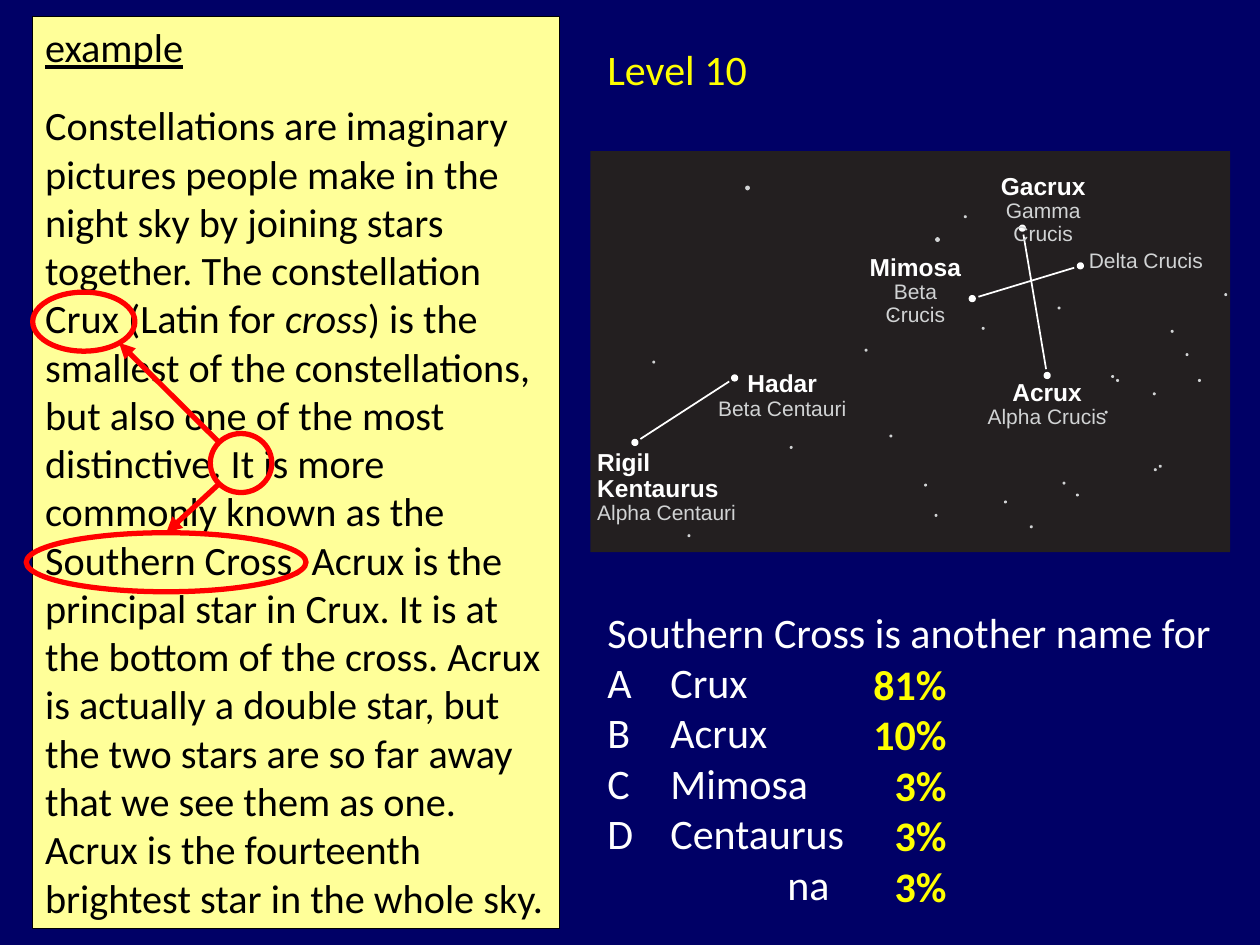
"""Build a reading-test slide about the Southern Cross."""
import math

import lxml.etree
import pptx
import pptx.dml.color
import pptx.enum.shapes
import pptx.enum.text
import pptx.oxml.ns
import pptx.util

Cm, Pt = pptx.util.Cm, pptx.util.Pt
KIND = pptx.enum.shapes.MSO_SHAPE
ALIGN = pptx.enum.text.PP_ALIGN
ANCHOR = pptx.enum.text.MSO_ANCHOR
NAVY, CREAM, BLACK, WHITE = "000066", "FFFF99", "000000", "FFFFFF"
YELLOW, RED, SKY, GREY = "FFFF00", "FF0000", "231F20", "D1D3D4"

PASSAGE = [
    ("Constellations are imaginary pictures people make in the night sky by "
     "joining stars together. The constellation Crux (Latin for ", False),
    ("cross", True),
    (") is the smallest of the constellations, but also one of the most "
     "distinctive. It is more commonly known as the Southern Cross. Acrux is "
     "the principal star in Crux. It is at the bottom of the cross. Acrux is "
     "actually a double star, but the two stars are so far away that we see "
     "them as one. Acrux is the fourteenth brightest star in the whole sky.",
     False),
]
STARS = {
    "Mimosa": (19.6, 6.02), "Delta": (21.78, 5.36), "Gacrux": (20.61, 4.6),
    "Acrux": (21.11, 7.57), "Hadar": (14.81, 7.62), "Rigil": (12.8, 8.92),
}
LINKS = [("Gacrux", "Acrux"), ("Mimosa", "Delta"), ("Rigil", "Hadar")]
FAINT = [
    (17.46, 7.06), (18, 6.38), (19.82, 6.62), (13.18, 7.3), (20.27, 10.12),
    (20.79, 10.62), (21.72, 9.98), (21.45, 9.74), (23.29, 9.47), (23.39, 9.4),
    (24.18, 7.67), (22.53, 7.67), (22.43, 7.59), (22.3, 8.31), (23.27, 7.94),
    (23.93, 7.15), (24.71, 5.94), (17.96, 8.79), (18.87, 10.39), (18.66, 9.78),
    (13.89, 10.8), (15.95, 9.02), (19.46, 4.37), (23.63, 6.68), (21.35, 6.21),
]
CLEAR = [(15.07, 3.79), (18.9, 4.83)]
LABELS = [
    ((19.71, 3.58, 2.64, 0.91), ["Gacrux"], "Gamma Crucis", 13, ALIGN.CENTER),
    ((17.45, 5.21, 2.01, 0.94), ["Mimosa"], "Beta Crucis", 13, ALIGN.CENTER),
    ((21.95, 5.08, 2.44, 0.43), [], "Delta Crucis", 12, ALIGN.LEFT),
    ((14.4, 7.52, 2.74, 0.97), ["Hadar"], "Beta Centauri", 14, ALIGN.CENTER),
    ((19.84, 7.7, 2.54, 0.99), ["Acrux"], "Alpha Crucis", 14, ALIGN.CENTER),
    ((12.04, 9.07, 2.97, 1.55), ["Rigil", "Kentaurus"], "Alpha Centauri", 15,
     ALIGN.LEFT),
]
CHOICES = ["A\tCrux", "B\tAcrux", "C\tMimosa", "D\tCentaurus"]
RATES = ["81%", "10%", "3%", "3%", "3%"]


def color(code):
    """Turn a hex string into a colour."""
    return pptx.dml.color.RGBColor.from_string(code)


def node(parent, tag, **attrs):
    """Append a drawing element to a parent."""
    return lxml.etree.SubElement(parent, pptx.oxml.ns.qn(tag), attrs)


def run(para, text, size, ink, face="Calibri", bold=False, slant=False):
    """Add one styled run."""
    piece = para.add_run()
    piece.text = text
    font = piece.font
    font.name, font.size, font.bold, font.italic = face, Pt(size), bold, slant
    font.color.rgb = color(ink)
    return piece


def lines(frame, count):
    """Return the given number of paragraphs in a frame."""
    return [frame.paragraphs[0]] + [frame.add_paragraph() for _ in range(count - 1)]


def place(shape, left, top, width, height):
    """Move and size a placeholder and fix its frame."""
    shape.left, shape.top = Cm(left), Cm(top)
    shape.width, shape.height = Cm(width), Cm(height)
    shape.text_frame.word_wrap = True
    shape.text_frame.auto_size = pptx.enum.text.MSO_AUTO_SIZE.NONE
    return shape.text_frame


def draw(shapes, kind, box, fill=None, edge=None, weight=1):
    """Add a flat preset shape."""
    shape = shapes.add_shape(kind, *map(Cm, box))
    shape.shadow.inherit = False
    if fill:
        shape.fill.solid()
        shape.fill.fore_color.rgb = color(fill)
    else:
        shape.fill.background()
    if edge:
        shape.line.color.rgb = color(edge)
        shape.line.width = Pt(weight)
    else:
        shape.line.fill.background()
    return shape


def star(shapes, spot, size, ink, edge=None):
    """Add a round star centred on a spot."""
    x, y = spot
    draw(shapes, KIND.OVAL, (x - size / 2, y - size / 2, size, size), ink, edge)


def link(shapes, start, end, ink, weight, arrow=False):
    """Add a straight line, with an arrowhead if asked."""
    line = shapes.add_connector(
        pptx.enum.shapes.MSO_CONNECTOR.STRAIGHT, *map(Cm, start + end))
    line.line.color.rgb = color(ink)
    line.line.width = Pt(weight)
    if arrow:
        node(line.line._get_or_add_ln(), "a:tailEnd", type="triangle")
    node(line._element.spPr, "a:effectLst")
    return line


def join(shapes, start, end, gap=0.13):
    """Link two stars, leaving a gap at each."""
    dx, dy = end[0] - start[0], end[1] - start[1]
    part = gap / math.hypot(dx, dy)
    link(shapes, (start[0] + dx * part, start[1] + dy * part),
         (end[0] - dx * part, end[1] - dy * part), WHITE, 1)


def label(shapes, box, names, note, lead, align):
    """Name a star in bold with its formal name below."""
    frame = shapes.add_textbox(*map(Cm, box)).text_frame
    frame.word_wrap = True
    frame.margin_left = frame.margin_right = 0
    frame.margin_top = frame.margin_bottom = 0
    paras = lines(frame, len(names) + 1)
    for para, name in zip(paras, names):
        run(para, name, 14, WHITE, "Arial", bold=True)
    run(paras[-1], note, 12, GREY, "Arial")
    for para in paras:
        para.alignment, para.line_spacing = align, Pt(lead)
    paras[-1].line_spacing = Pt(min(lead, 13))


def story(shapes):
    """Add the reading passage."""
    panel = draw(shapes, KIND.RECTANGLE, (0.66, 0.33, 10.62, 18.39),
                 CREAM, BLACK, 0.75)
    panel.text_frame.vertical_anchor = ANCHOR.TOP
    panel.text_frame.word_wrap = True
    head, body = lines(panel.text_frame, 2)
    head.alignment = body.alignment = ALIGN.LEFT
    run(head, "example", 23, BLACK).font.underline = True
    body.space_before = Pt(17)
    for text, slant in PASSAGE:
        run(body, text, 23, BLACK, slant=slant)


def chart(shapes):
    """Add the star map."""
    draw(shapes, KIND.RECTANGLE, (11.9, 3.05, 12.9, 8.08), SKY)
    for spot in FAINT:
        star(shapes, spot, 0.06, GREY)
    for spot in CLEAR:
        star(shapes, spot, 0.06, GREY, GREY)
    for spot in STARS.values():
        star(shapes, spot, 0.11, WHITE, WHITE)
    for start, end in LINKS:
        join(shapes, STARS[start], STARS[end])
    for item in LABELS:
        label(shapes, *item)


def quiz(slide):
    """Add the question, its choices and the answer rates."""
    frame = place(slide.placeholders[1], 11.99, 12.09, 12.98, 6.4)
    texts = ["Southern Cross is another name for", *CHOICES, "na"]
    for para, text in zip(lines(frame, len(texts)), texts):
        props = para._p.get_or_add_pPr()
        props.set("marL", str(Cm(3.63) if text == "na" else 0))
        props.set("indent", "0")
        node(props, "a:buNone")
        node(node(props, "a:tabLst"), "a:tab", pos=str(Cm(0.88)), algn="l")
        para.space_before = Pt(0)
        run(para, text, 24, WHITE)
    rates = slide.shapes.add_textbox(Cm(17.32), Cm(13.15), Cm(2.01), Cm(5.42))
    rates.text_frame.word_wrap = True
    for para, text in zip(lines(rates.text_frame, len(RATES)), RATES):
        para.alignment = ALIGN.RIGHT
        run(para, text, 24, YELLOW, bold=True)


def marks(shapes):
    """Circle the linked words and point from one to the others."""
    rings = [(0.66, 5.89, 2.06, 1.19), (4.24, 8.74, 1.24, 1.19),
             (0.53, 10.74, 5.64, 1.19)]
    ovals = [draw(shapes, KIND.OVAL, box, edge=RED, weight=3) for box in rings]
    link(shapes, (4.42, 8.92), (2.4, 6.91), RED, 3, arrow=True)
    down = link(shapes, (4.42, 9.75), (3.35, 10.74), RED, 3, arrow=True)
    down.end_connect(ovals[2], 0)


def main():
    """Build and save the slide."""
    deck = pptx.Presentation()
    deck.slide_width, deck.slide_height = Cm(25.4), Cm(19.05)
    slide = deck.slides.add_slide(deck.slide_layouts[1])
    slide.background.fill.solid()
    slide.background.fill.fore_color.rgb = color(NAVY)
    title = place(slide.shapes.title, 11.99, 0.74, 3.35, 1.27)
    title.paragraphs[0].alignment = ALIGN.LEFT
    run(title.paragraphs[0], "Level 10", 24, YELLOW)
    story(slide.shapes)
    chart(slide.shapes.add_group_shape().shapes)
    quiz(slide)
    marks(slide.shapes)
    deck.save("out.pptx")


if __name__ == "__main__":
    main()
